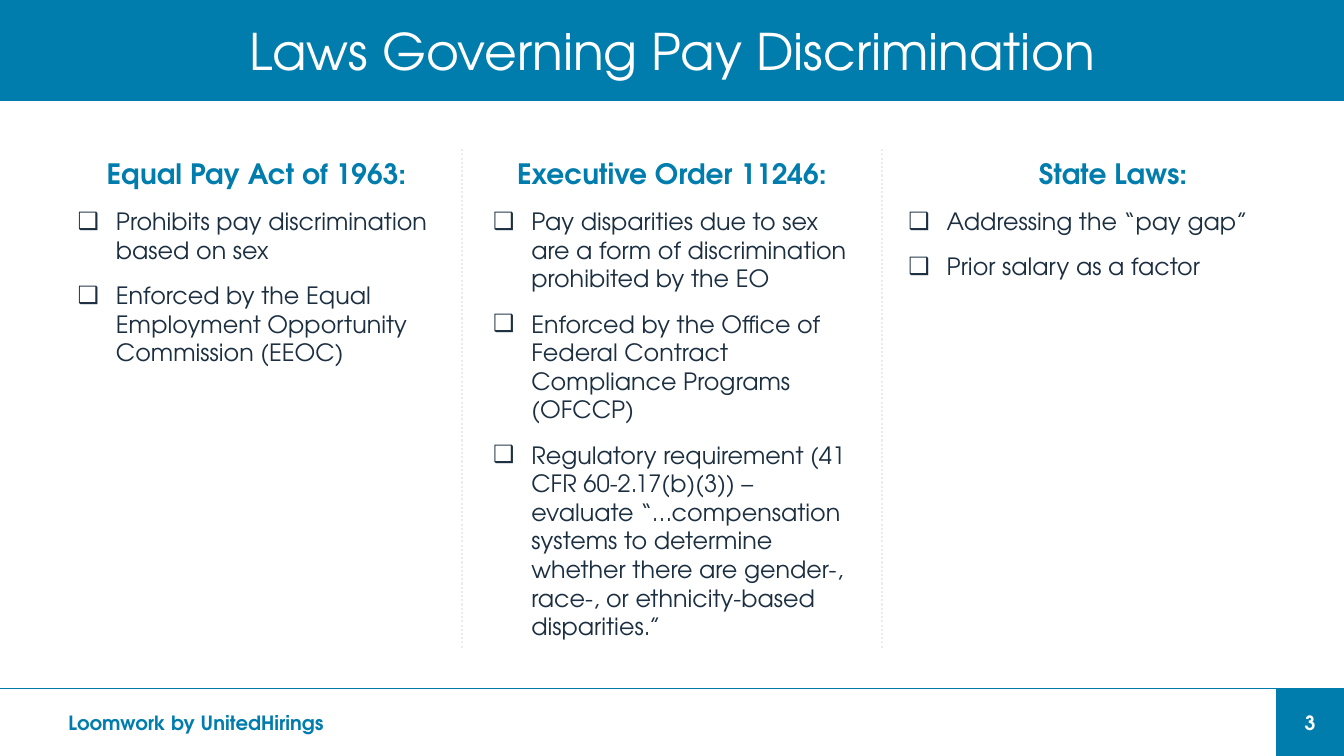
from dataclasses import dataclass

from lxml.etree import SubElement
from pptx import Presentation
from pptx.dml.color import RGBColor
from pptx.enum.dml import MSO_LINE
from pptx.enum.shapes import MSO_CONNECTOR, MSO_SHAPE
from pptx.enum.text import MSO_ANCHOR, MSO_AUTO_SIZE, PP_ALIGN
from pptx.oxml.ns import qn
from pptx.util import Inches, Pt


@dataclass(frozen=True)
class Theme:
    font: str = "TeX Gyre Adventor"
    blue: RGBColor = RGBColor(0x00, 0x7D, 0xAD)
    rule: RGBColor = RGBColor(0x00, 0x7A, 0xA9)
    divider: RGBColor = RGBColor(0xEA, 0xEB, 0xEC)
    ink: RGBColor = RGBColor(0x1C, 0x2F, 0x41)
    white: RGBColor = RGBColor(0xFF, 0xFF, 0xFF)
    title_size: int = 36
    heading_size: int = 20
    list_size: int = 17
    footer_size: int = 14


THEME = Theme()

COLUMNS = [
    (0.67, 3.75, "Equal Pay Act of 1963:", [
        "Prohibits pay discrimination based on sex",
        "Enforced by the Equal Employment Opportunity Commission (EEOC)",
    ]),
    (4.79, 3.75, "Executive Order 11246:", [
        "Pay disparities due to sex are a form of discrimination prohibited by the EO",
        "Enforced by the Office of Federal Contract Compliance Programs (OFCCP)",
        "Regulatory requirement (41 CFR 60-2.17(b)(3)) – evaluate “…compensation systems "
        "to determine whether there are gender-, race-, or ethnicity-based disparities.”",
    ]),
    (8.91, 4.26, "State Laws:", [
        "Addressing the “pay gap”",
        "Prior salary as a factor",
    ]),
]


def set_attributes(target, values):
    for name, value in values.items():
        setattr(target, name, value)


def place(shape, left, top, width, height):
    set_attributes(shape, {
        "left": Inches(left), "top": Inches(top),
        "width": Inches(width), "height": Inches(height),
    })


def format_frame(shape, anchor):
    set_attributes(shape.text_frame, {
        "word_wrap": True, "auto_size": MSO_AUTO_SIZE.NONE, "vertical_anchor": anchor,
    })


def write(paragraph, text, size, color, bold=False, alignment=PP_ALIGN.LEFT):
    paragraph.alignment = alignment
    run = paragraph.add_run()
    run.text = text
    set_attributes(run.font, {"name": THEME.font, "size": Pt(size), "bold": bold})
    run.font.color.rgb = color


def set_bullet(paragraph, character=None, indent=0):
    properties = paragraph._p.get_or_add_pPr()
    properties.set("marL", str(Inches(indent)))
    properties.set("indent", str(-Inches(indent)))
    if character:
        SubElement(properties, qn("a:buChar")).set("char", character)
    else:
        SubElement(properties, qn("a:buNone"))


def add_line(slide, start, end, color, width, dash=None):
    line = slide.shapes.add_connector(
        MSO_CONNECTOR.STRAIGHT, *(Inches(value) for value in start + end))
    line.line.color.rgb = color
    set_attributes(line.line, {"width": Pt(width), "dash_style": dash})
    SubElement(line._element.spPr, qn("a:effectLst"))


def add_title(slide, text):
    title = slide.shapes.title
    place(title, 0, 0, 13.33, 1)
    title.fill.solid()
    title.fill.fore_color.rgb = THEME.blue
    format_frame(title, MSO_ANCHOR.MIDDLE)
    write(title.text_frame.paragraphs[0], text, THEME.title_size, THEME.white,
          alignment=PP_ALIGN.CENTER)


def fill_column(body, left, width, heading, items):
    place(body, left, 1.5, width, 2.68)
    format_frame(body, MSO_ANCHOR.TOP)
    first = body.text_frame.paragraphs[0]
    set_bullet(first)
    set_attributes(first, {"space_before": Pt(0), "space_after": Pt(6)})
    write(first, heading, THEME.heading_size, THEME.blue, True, PP_ALIGN.CENTER)
    for item in items:
        paragraph = body.text_frame.add_paragraph()
        set_bullet(paragraph, "❑", 0.38)
        set_attributes(paragraph, {"space_before": Pt(6), "space_after": Pt(6)})
        write(paragraph, item, THEME.list_size, THEME.ink)


def add_footer(slide, text, number):
    label = slide.shapes.add_textbox(Inches(0.58), Inches(6.83), Inches(11.92), Inches(0.67))
    format_frame(label, MSO_ANCHOR.MIDDLE)
    write(label.text_frame.paragraphs[0], text, THEME.footer_size, THEME.blue, True)

    badge = slide.shapes.add_shape(
        MSO_SHAPE.RECTANGLE, Inches(12.66), Inches(6.83), Inches(0.67), Inches(0.67))
    badge.shadow.inherit = False
    badge.fill.solid()
    badge.fill.fore_color.rgb = THEME.blue
    badge.line.color.rgb = THEME.blue
    badge.line.width = Pt(0.75)
    format_frame(badge, MSO_ANCHOR.MIDDLE)
    write(badge.text_frame.paragraphs[0], number, THEME.footer_size, THEME.white, True,
          PP_ALIGN.CENTER)


def main():
    presentation = Presentation()
    set_attributes(presentation, {"slide_width": Inches(13.33), "slide_height": Inches(7.5)})
    slide = presentation.slides.add_slide(presentation.slide_layouts[4])

    add_title(slide, "Laws Governing Pay Discrimination")
    *bodies, unused = list(slide.placeholders)[1:]
    unused._element.getparent().remove(unused._element)
    for body, column in zip(bodies, COLUMNS):
        fill_column(body, *column)

    for left in (4.58, 8.75):
        add_line(slide, (left, 1.48), (left, 6.43), THEME.divider, 1.5, MSO_LINE.ROUND_DOT)
    add_line(slide, (0, 6.83), (13.32, 6.83), THEME.rule, 0.75)
    add_footer(slide, "Loomwork by UnitedHirings", "3")
    presentation.save("out.pptx")


if __name__ == "__main__":
    main()
